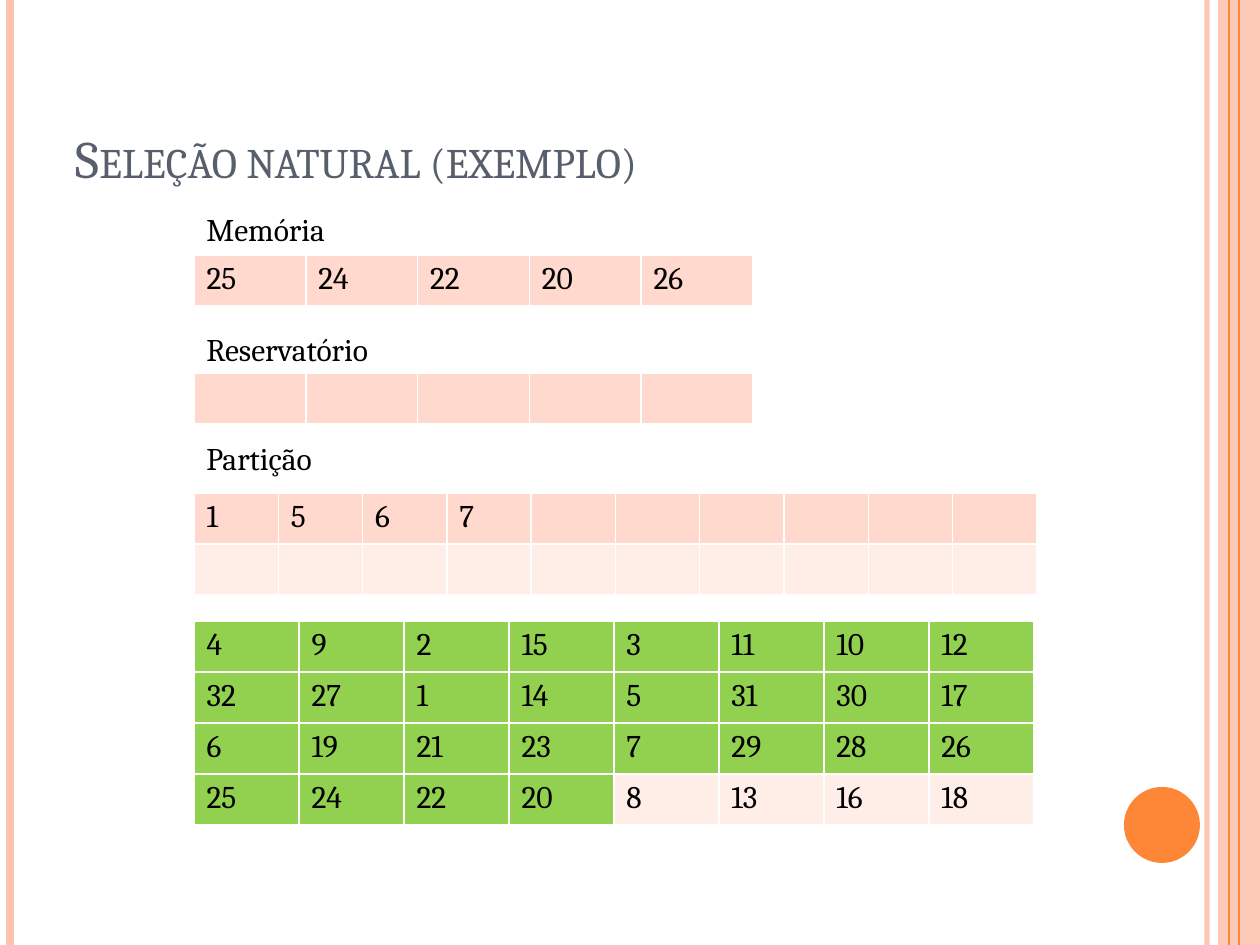
from lxml.etree import SubElement
from pptx import Presentation
from pptx.dml.color import RGBColor
from pptx.enum.shapes import MSO_CONNECTOR, MSO_SHAPE
from pptx.enum.text import MSO_ANCHOR, MSO_AUTO_SIZE, PP_ALIGN
from pptx.oxml.ns import qn
from pptx.util import Emu, Pt

PX = 914400 / 126
FONT = "Cambria"
BLACK = RGBColor(0x00, 0x00, 0x00)
SLATE = RGBColor(0x57, 0x5F, 0x6D)
ORANGE = RGBColor(0xFE, 0x86, 0x37)
PEACH = RGBColor(0xFE, 0xC3, 0xAE)
CELL_DARK = RGBColor(0xFF, 0xD9, 0xCE)
CELL_LIGHT = RGBColor(0xFF, 0xED, 0xE8)
GREEN = RGBColor(0x92, 0xD0, 0x50)

SLIDE_WIDTH, SLIDE_HEIGHT = 1260, 945
LEFT = 194
ROW_HEIGHT = 51


def box(*lengths):
    return [Emu(round(length * PX)) for length in lengths]


def style(paragraph, size, color):
    paragraph.font.name = FONT
    paragraph.font.size = Pt(size)
    paragraph.font.color.rgb = color


presentation = Presentation()
presentation.slide_width, presentation.slide_height = box(SLIDE_WIDTH, SLIDE_HEIGHT)
slide = presentation.slides.add_slide(presentation.slide_layouts[5])
shapes = slide.shapes

# Side decoration, from back to front: x, color, line width, opacity in percent
side_lines = [
    (1207, PEACH, 3, 93),
    (10, PEACH, 4.5, 100),
    (1239, ORANGE, 1.5, 100),
    (1229, ORANGE, 0.75, 100),
]
band = shapes.add_shape(MSO_SHAPE.RECTANGLE, *box(1218, 0, 42, SLIDE_HEIGHT))
circle = shapes.add_shape(MSO_SHAPE.OVAL, *box(1124, 787, 76, 76))
for shape, color in ((band, PEACH), (circle, ORANGE)):
    shape.shadow.inherit = False
    shape.fill.solid()
    shape.fill.fore_color.rgb = color
    shape.line.fill.background()

translucent = [(band, 87)]
for x, color, width, opacity in side_lines:
    line = shapes.add_connector(MSO_CONNECTOR.STRAIGHT, *box(x, 0, x, SLIDE_HEIGHT))
    line.line.color.rgb = color
    line.line.width = Pt(width)
    SubElement(line._element.spPr, qn("a:effectLst"))
    if opacity < 100:
        translucent.append((line, opacity))
    if x < band.left / PX:
        shapes._spTree.remove(line._element)
        band._element.addprevious(line._element)
for shape, opacity in translucent:
    color_element = next(shape._element.spPr.iter(qn("a:srgbClr")))
    SubElement(color_element, qn("a:alpha"), val=str(opacity * 1000))

# Title
title = shapes.title
title.left, title.top, title.width, title.height = box(63, 38, 1029, 157)
title.text_frame.text = "Seleção natural (exemplo)"
title.text_frame.vertical_anchor = MSO_ANCHOR.BOTTOM
paragraph = title.text_frame.paragraphs[0]
paragraph.alignment = PP_ALIGN.LEFT
style(paragraph, 30, SLATE)
paragraph.runs[0]._r.get_or_add_rPr().set("cap", "small")

# Labels
for text, top, width in (("Memória", 204, 157), ("Reservatório", 324, 212), ("Partição", 433, 149)):
    label = shapes.add_textbox(*box(LEFT, top, width, 50))
    label.text_frame.word_wrap = False
    label.text_frame.auto_size = MSO_AUTO_SIZE.SHAPE_TO_FIT_TEXT
    label.text_frame.text = text
    style(label.text_frame.paragraphs[0], 18, BLACK)

# Tables: top, width, rows of values, number of leading green cells
records = [
    [4, 9, 2, 15, 3, 11, 10, 12],
    [32, 27, 1, 14, 5, 31, 30, 17],
    [6, 19, 21, 23, 7, 29, 28, 26],
    [25, 24, 22, 20, 8, 13, 16, 18],
]
tables = [
    (255, 559, [[25, 24, 22, 20, 26]], 0),
    (373, 559, [[""] * 5], 0),
    (493, 843, [[1, 5, 6, 7] + [""] * 6, [""] * 10], 0),
    (621, 840, records, 28),
]
for top, width, rows, green_count in tables:
    column_count = len(rows[0])
    frame = shapes.add_table(
        len(rows), column_count, *box(LEFT, top, width, ROW_HEIGHT * len(rows))
    )
    table = frame.table
    table.first_row = False
    table.horz_banding = False
    for r, values in enumerate(rows):
        for c, value in enumerate(values):
            cell = table.cell(r, c)
            cell.fill.solid()
            if r * column_count + c < green_count:
                cell.fill.fore_color.rgb = GREEN
            else:
                cell.fill.fore_color.rgb = CELL_LIGHT if r % 2 else CELL_DARK
            if value != "":
                cell.text = str(value)
                style(cell.text_frame.paragraphs[0], 18, BLACK)

presentation.save("out.pptx")
